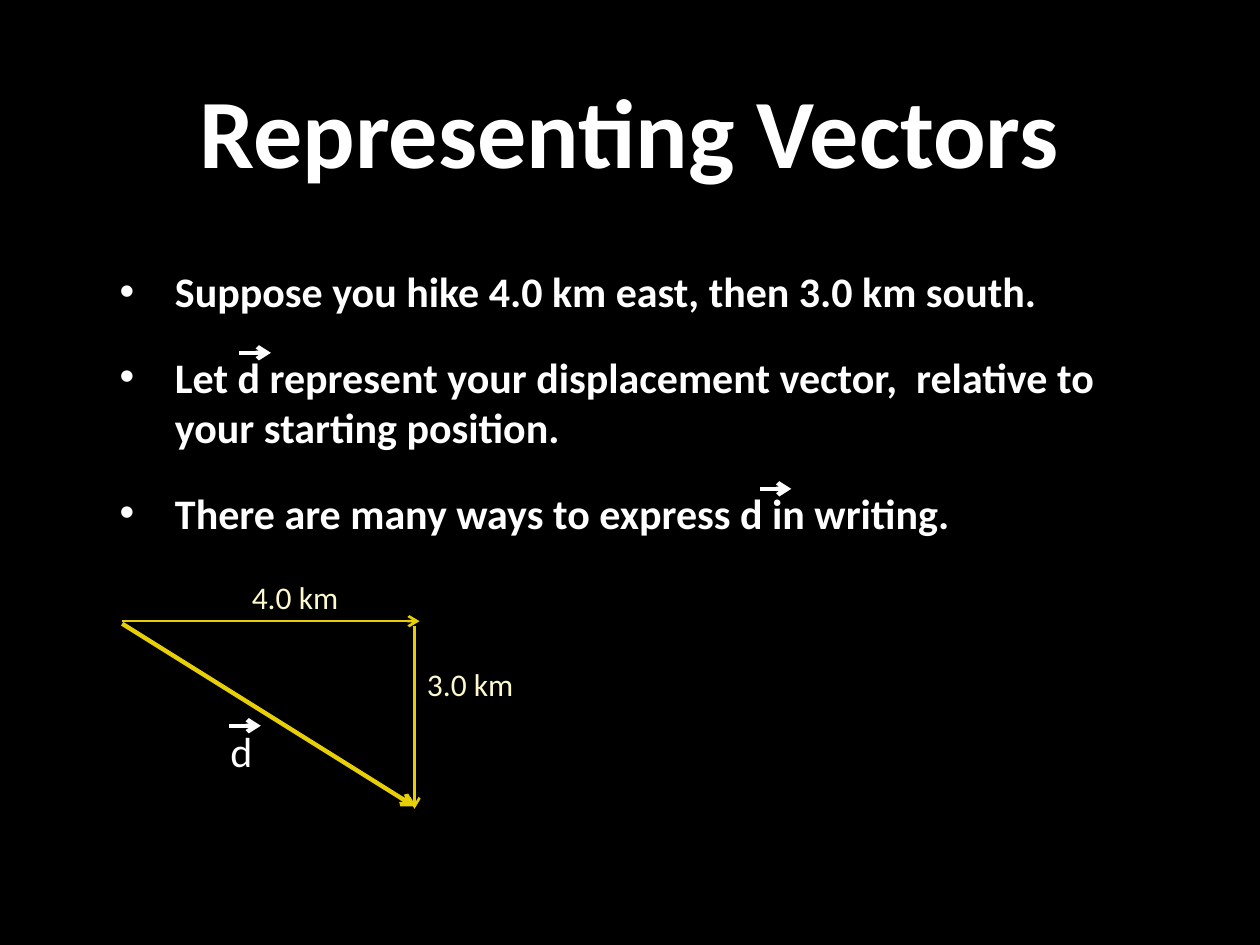
from lxml import etree
from pptx import Presentation
from pptx import util as u
from pptx.dml.color import RGBColor
from pptx.enum import shapes, text
from pptx.oxml.ns import qn

WHITE = RGBColor(0xFF, 0xFF, 0xFF)
BLACK = RGBColor(0, 0, 0)
GOLD = RGBColor(0xE7, 0xCF, 0x08)
CREAM = RGBColor(0xFD, 0xF8, 0xCD)

TITLE = "Representing Vectors"
POINTS = [
    "Suppose you hike 4.0 km east, then 3.0 km south.",
    "Let d represent your displacement vector,  relative to your starting position.",
    "There are many ways to express d in writing.",
]
LABELS = [
    ("4.0 km", (19, 45.4, 9.2, 4), 18, CREAM),
    ("3.0 km", (32.9, 52.3, 9.1, 4), 18, CREAM),
    ("d", (17.3, 57.1, 3.9, 5), 24, WHITE),
]
SIDES = [
    ((9.7, 49.3), (33.3, 49.3), 1.5),
    ((32.9, 49.7), (32.9, 64.2), 1.5),
    ((9.7, 49.5), (32.9, 64), 2.5),
]
MARKS = [(19, 28), (60.3, 38.8), (18.2, 57.6)]
MARK = 2.5
COLS, ROWS = 100, 75
LEFT, WIDTH = 8.5, 82.9

deck = Presentation()
deck.slide_width, deck.slide_height = u.Inches(10), u.Inches(7.5)
slide = deck.slides.add_slide(deck.slide_layouts[5])
slide.background.fill.solid()
slide.background.fill.fore_color.rgb = BLACK


def place(x, y):
    return int(deck.slide_width * x / COLS), int(deck.slide_height * y / ROWS)


def write(para, words, size, color, bold=False):
    run = para.add_run()
    run.text = words
    font = run.font
    font.name, font.size, font.bold = "Calibri", u.Pt(size), bold
    font.color.rgb = color


def add_box(x, y, wide, high, wrap):
    box = slide.shapes.add_textbox(*place(x, y), *place(wide, high))
    box.text_frame.word_wrap = wrap
    return box.text_frame


def arrow(start, end, width, color):
    line = slide.shapes.add_connector(
        shapes.MSO_CONNECTOR.STRAIGHT, *place(*start), *place(*end))
    line.line.color.rgb, line.line.width = color, u.Pt(width)
    etree.SubElement(line.line._get_or_add_ln(), qn("a:tailEnd"), type="arrow")
    etree.SubElement(line._element.spPr, qn("a:effectLst"))


def bullet(para):
    props = para._p.get_or_add_pPr()
    indent = u.Inches(0.44)
    props.set("marL", str(indent))
    props.set("indent", str(-indent))
    etree.SubElement(props, qn("a:buFont"), typeface="Arial")
    etree.SubElement(props, qn("a:buChar"), char="•")


head = slide.shapes.title
head.left, head.top = place(LEFT, 1.2)
head.width, head.height = place(WIDTH, 18.1)
head.text_frame.vertical_anchor = text.MSO_ANCHOR.MIDDLE
para = head.text_frame.paragraphs[0]
para.alignment = text.PP_ALIGN.CENTER
write(para, TITLE, 56, WHITE, True)

body = add_box(LEFT, 20.6, WIDTH, 24.8, True)
for i, point in enumerate(POINTS):
    para = body.add_paragraph() if i else body.paragraphs[0]
    bullet(para)
    para.space_before = u.Pt(20 if i else 0)
    para.font.size, para.font.bold = u.Pt(24), True
    para.font.color.rgb = WHITE
    write(para, point, 24, WHITE, True)

for start, end, width in SIDES:
    arrow(start, end, width, GOLD)
for words, area, size, color in LABELS:
    frame = add_box(*area, False)
    frame.auto_size = text.MSO_AUTO_SIZE.SHAPE_TO_FIT_TEXT
    write(frame.paragraphs[0], words, size, color)
for x, y in MARKS:
    arrow((x, y), (x + MARK, y), 2.5, WHITE)

deck.save("out.pptx")
